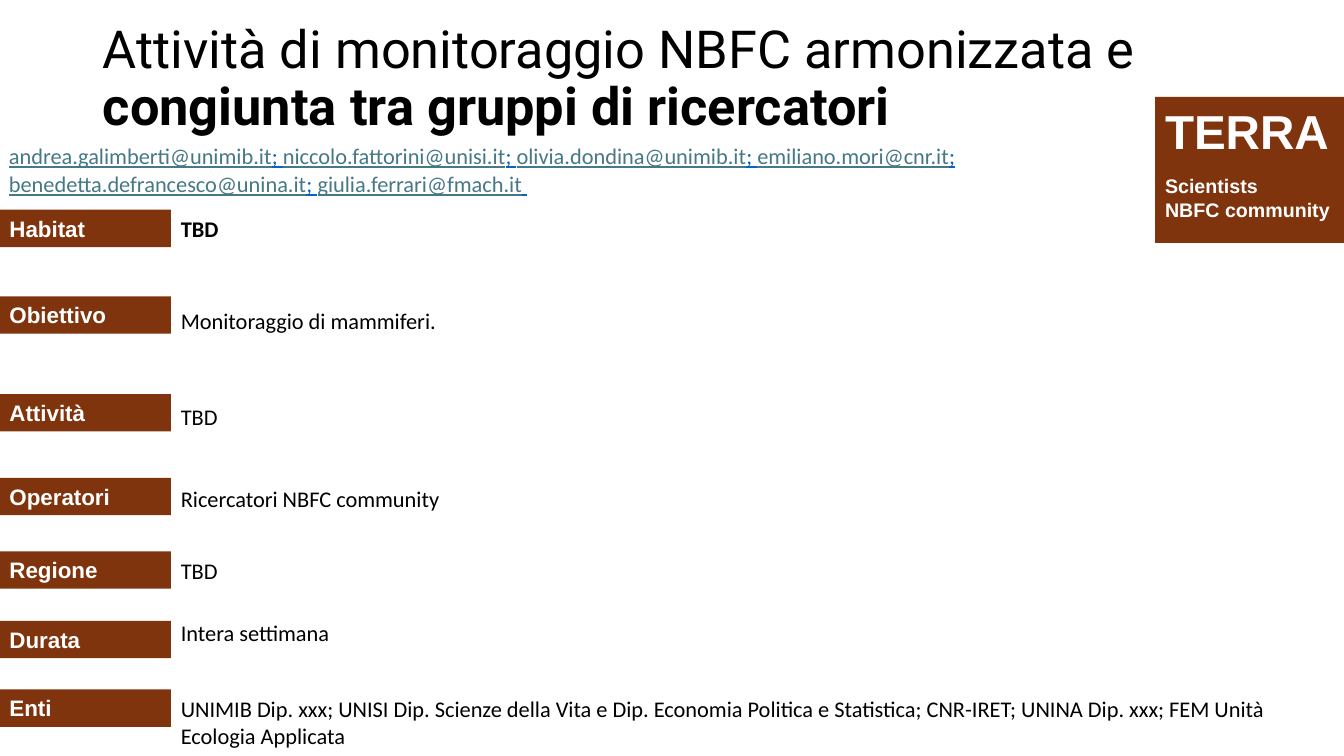
from pptx import Presentation
from pptx.dml.color import RGBColor
from pptx.enum.shapes import MSO_SHAPE as Shape
from pptx.enum.text import MSO_ANCHOR as Anchor, MSO_AUTO_SIZE as Auto, PP_ALIGN as Align
from pptx.util import Pt

BROWN, WHITE, BLACK = "7F340D", "FFFFFF", "000000"
TEAL, BLUE = "467886", "0563C1"
MAILS = [
    "andrea.galimberti@unimib.it",
    "niccolo.fattorini@unisi.it",
    "olivia.dondina@unimib.it",
    "emiliano.mori@cnr.it",
    "benedetta.defrancesco@unina.it",
    "giulia.ferrari@fmach.it",
]
ROWS = [
    ("Habitat", 149.8, "TBD", 0, True, None),
    ("Obiettivo", 211.7, "Monitoraggio di mammiferi.", 2.9, False, 1.07),
    ("Attività", 281.5, "TBD", 1.5, False, 1.07),
    ("Operatori", 341.3, "Ricercatori NBFC community", 0.7, False, 1.07),
    ("Regione", 393.8, "TBD", 0.7, False, None),
    ("Durata", 443.5, "Intera settimana", -5, False, None),
    ("Enti", 492.5, "UNIMIB Dip. xxx; UNISI Dip. Scienze della Vita e Dip. Economia "
     "Politica e Statistica; CNR-IRET; UNINA Dip. xxx; FEM Unità Ecologia Applicata",
     0.7, False, None),
]


def tint(code):
    return RGBColor.from_string(code)


def add_run(para, text, font, size, color, bold=False, under=None):
    run = para.add_run()
    run.text = text
    face = run.font
    face.name, face.size, face.bold = font, Pt(size), bold
    face.underline = under
    face.color.rgb = tint(color)


def set_frame(frame, anchor=Anchor.TOP, space=None, align=Align.LEFT):
    frame.word_wrap = True
    frame.auto_size = Auto.NONE
    frame.vertical_anchor = anchor
    frame.margin_left = frame.margin_right = Pt(7.2)
    frame.margin_top = frame.margin_bottom = Pt(3.6)
    para = frame.paragraphs[0]
    para.alignment = align
    para.line_spacing = space
    return para


def add_text(slide, box, space=None, align=Align.LEFT):
    area = slide.shapes.add_textbox(*map(Pt, box))
    return set_frame(area.text_frame, space=space, align=align)


def add_block(slide, box, lines, size):
    block = slide.shapes.add_shape(Shape.RECTANGLE, *map(Pt, box))
    block.shadow.inherit = False
    block.fill.solid()
    block.fill.fore_color.rgb = tint(BROWN)
    block.line.fill.background()
    para = set_frame(block.text_frame)
    for index, line in enumerate(lines):
        if index:
            para = block.text_frame.add_paragraph()
            para.alignment = Align.LEFT
        add_run(para, line, "Arial", size, WHITE, True)


def add_title(slide, box):
    title = slide.shapes.title
    title.left, title.top, title.width, title.height = map(Pt, box)
    para = set_frame(title.text_frame, Anchor.MIDDLE, 0.9)
    add_run(para, "Attività di monitoraggio NBFC armonizzata e ", "Roboto", 37.4, BLACK)
    add_run(para, "congiunta tra gruppi di ricercatori", "Roboto", 37.4, BLACK, True)


def add_mails(slide, box):
    para = add_text(slide, box, 1.07)
    for mail in MAILS:
        add_run(para, mail, "Calibri", 16, TEAL, under=True)
        mark = " " if mail == MAILS[-1] else "; "
        add_run(para, mark, "Calibri", 16, BLUE, under=True)


def add_row(slide, box, label, text, shift, bold, space):
    left, top, width, height = box
    tab = 122.4
    add_block(slide, (left, top, tab, height), [label], 16)
    align = Align.JUSTIFY if space else Align.LEFT
    area = (left + tab, top + shift, width - tab, height)
    para = add_text(slide, area, space, align)
    add_run(para, text, "Calibri", 16, BLACK, bold)


def add_badge(slide, box):
    left, top, width, height = box
    add_block(slide, box, ["TERRA"], 34)
    add_block(slide, (left, top + 51.8, width, 41),
              ["Scientists", "NBFC community"], 14)


def main():
    deck = Presentation()
    deck.slide_width, deck.slide_height = Pt(960), Pt(540)
    slide = deck.slides.add_slide(deck.slide_layouts[5])
    add_title(slide, (66.2, 5, 770.4, 104.4))
    add_mails(slide, (-0.7, 96.5, 788.4, 47.5))
    for label, top, text, shift, bold, space in ROWS:
        height = 46.1 if label == "Enti" else 26.7
        add_row(slide, (-0.3, top, 944, 26.7), label, text, shift, bold, space)
    add_badge(slide, (825.1, 69.1, 134.9, 104.4))
    deck.save("out.pptx")


if __name__ == "__main__":
    main()
